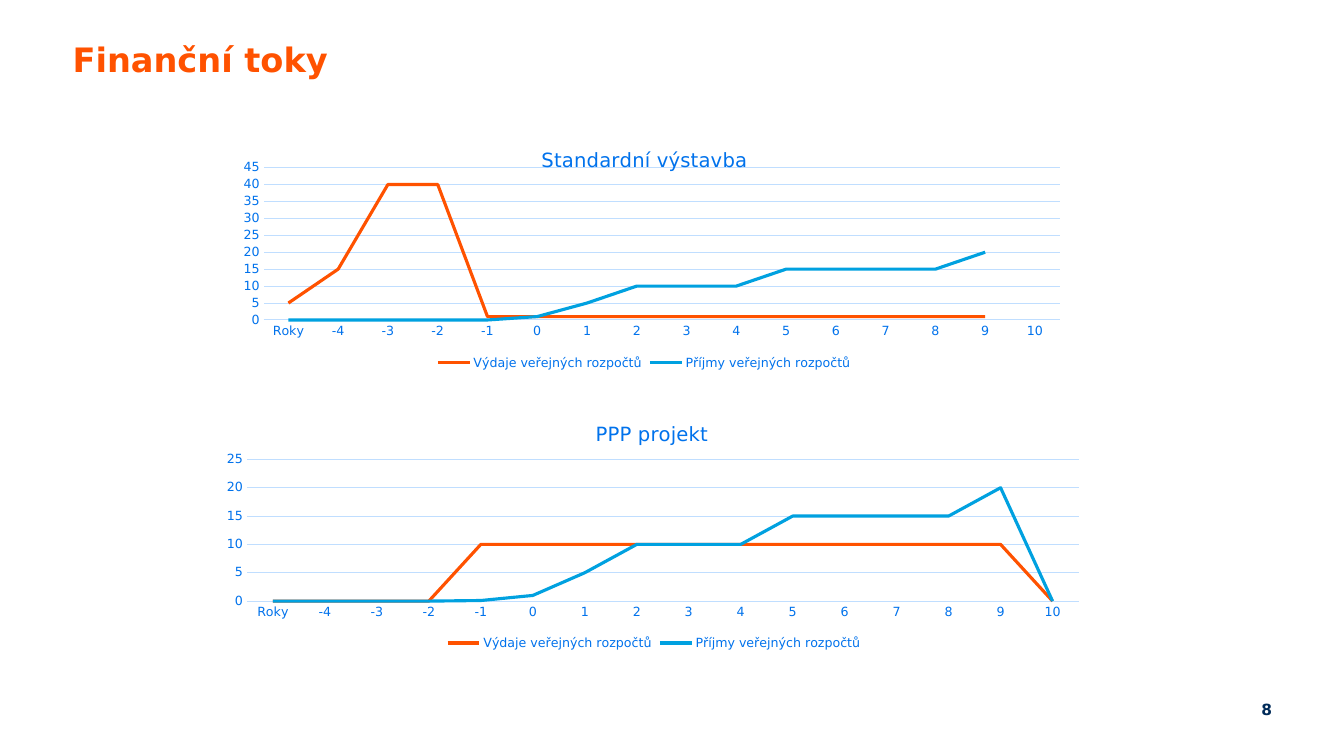
from dataclasses import dataclass

from lxml import etree
from pptx import Presentation
from pptx.chart import data as chart_data
from pptx.dml.color import RGBColor
from pptx.enum import chart as charts, text
from pptx.oxml import ns
from pptx.util import Cm, Pt

COLORS = {
    "orange": "FF5200",
    "cyan": "00A1E0",
    "blue": "0072EC",
    "navy": "002B59",
    "grid": "C0DEFF",
}
FONT = "DejaVu Sans"
YEARS = ["Roky"] + [str(year) for year in range(-4, 11)]
INCOME = [1, 5] + [10] * 3 + [15] * 4 + [20]


@dataclass
class Label:
    content: str
    left: float
    top: float
    width: float
    height: float
    size: float
    color: str
    align: text.PP_ALIGN
    anchor: text.MSO_ANCHOR


@dataclass
class CashFlow:
    title: str
    left: float
    top: float
    height: float
    expenses: list[float]
    income: list[float]
    maximum: float
    blanks: str  # how the empty last year is drawn
    title_place: tuple[float, ...]
    plot_place: tuple[float, ...]


LABELS = [
    Label("Finanční toky", 1.83, 0.99, 30.2, 2.24, 24, "orange",
          text.PP_ALIGN.LEFT, text.MSO_ANCHOR.TOP),
    Label("8", 30.28, 17.58, 1.78, 0.61, 11, "navy",
          text.PP_ALIGN.RIGHT, text.MSO_ANCHOR.MIDDLE),
]
CASH_FLOWS = [
    CashFlow("Standardní výstavba", 5.08, 3.23, 6.2,
             [5, 15, 40, 40] + [1] * 11, [0] * 5 + INCOME, 45, "gap",
             (0.38, 0.06), (0.07, 0.16, 0.9, 0.62)),
    CashFlow("PPP projekt", 5.33, 10.11, 6.38,
             [0] * 4 + [10] * 11, [0] * 4 + [0.1] + INCOME, 25, "zero",
             (0.43, 0.06), (0.04, 0.23, 0.94, 0.56)),
]


def rgb(name: str) -> RGBColor:
    return RGBColor.from_string(COLORS[name])


def style_font(font, size: float, color: str, bold: bool = False) -> None:
    font.name, font.size, font.bold = FONT, Pt(size), bold
    font.color.rgb = rgb(color)


def style_line(line, color: str, width: float) -> None:
    line.color.rgb = rgb(color)
    line.width = Pt(width)


def manual_layout(place: tuple[float, ...], inner: bool = False):
    """Build a c:layout from x, y and optionally width, height fractions."""
    layout = etree.Element(ns.qn("c:layout"))
    manual = etree.SubElement(layout, ns.qn("c:manualLayout"))
    settings = [("layoutTarget", "inner")] if inner else []
    settings += [("xMode", "edge"), ("yMode", "edge")]
    settings += [(key, str(value)) for key, value in zip("xywh", place)]
    for key, value in settings:
        etree.SubElement(manual, ns.qn(f"c:{key}")).set("val", value)
    return layout


def add_label(page, label: Label) -> None:
    box = page.shapes.add_textbox(Cm(label.left), Cm(label.top),
                                  Cm(label.width), Cm(label.height))
    frame = box.text_frame
    frame.word_wrap = True
    frame.margin_left = frame.margin_right = 0
    frame.margin_top = frame.margin_bottom = 0
    frame.vertical_anchor = label.anchor
    frame.text = label.content
    para = frame.paragraphs[0]
    para.alignment = label.align
    style_font(para.runs[0].font, label.size, label.color, True)


def add_cash_flow(page, flow: CashFlow) -> None:
    data = chart_data.CategoryChartData()
    data.categories = YEARS
    data.add_series("Výdaje veřejných rozpočtů", flow.expenses + [None])
    data.add_series("Příjmy veřejných rozpočtů", flow.income + [None])
    chart = page.shapes.add_chart(
        charts.XL_CHART_TYPE.LINE, Cm(flow.left), Cm(flow.top),
        Cm(22.3), Cm(flow.height), data).chart
    style_font(chart.font, 10, "navy")

    # Title and legend
    chart.has_title = True
    title = chart.chart_title
    title.include_in_layout = False
    title.text_frame.text = flow.title
    style_font(title.text_frame.paragraphs[0].runs[0].font, 14, "blue")
    chart.has_legend = True
    chart.legend.position = charts.XL_LEGEND_POSITION.BOTTOM
    chart.legend.include_in_layout = False
    style_font(chart.legend.font, 9, "blue")

    # Axes
    years, amounts = chart.category_axis, chart.value_axis
    for axis in (years, amounts):
        axis.major_tick_mark = axis.minor_tick_mark = charts.XL_TICK_MARK.NONE
        style_font(axis.tick_labels.font, 9, "blue")
    style_line(years.format.line, "grid", 0.75)
    amounts.format.line.fill.background()
    amounts.has_major_gridlines = True
    style_line(amounts.major_gridlines.format.line, "grid", 0.75)
    amounts.minimum_scale, amounts.maximum_scale = 0, flow.maximum
    amounts.major_unit = 5

    # Lines
    chart.plots[0].vary_by_categories = False
    for series, color in zip(chart.plots[0].series, ("orange", "cyan")):
        series.smooth = False
        series.marker.style = charts.XL_MARKER_STYLE.NONE
        style_line(series.format.line, color, 2.25)

    # Placement of title and plot, handling of empty values
    root = chart._chartSpace
    for old in root.xpath("c:chart/c:title/c:layout | c:chart/c:plotArea/c:layout"):
        old.getparent().remove(old)
    root.xpath("c:chart/c:title/c:tx")[0].addnext(manual_layout(flow.title_place))
    root.xpath("c:chart/c:plotArea")[0].insert(0, manual_layout(flow.plot_place, True))
    root.xpath("c:chart/c:dispBlanksAs")[0].set("val", flow.blanks)


def main() -> None:
    deck = Presentation()
    deck.slide_width, deck.slide_height = Cm(33.87), Cm(19.05)
    page = deck.slides.add_slide(deck.slide_layouts[6])
    for label in LABELS:
        add_label(page, label)
    for flow in CASH_FLOWS:
        add_cash_flow(page, flow)
    deck.save("out.pptx")


if __name__ == "__main__":
    main()
